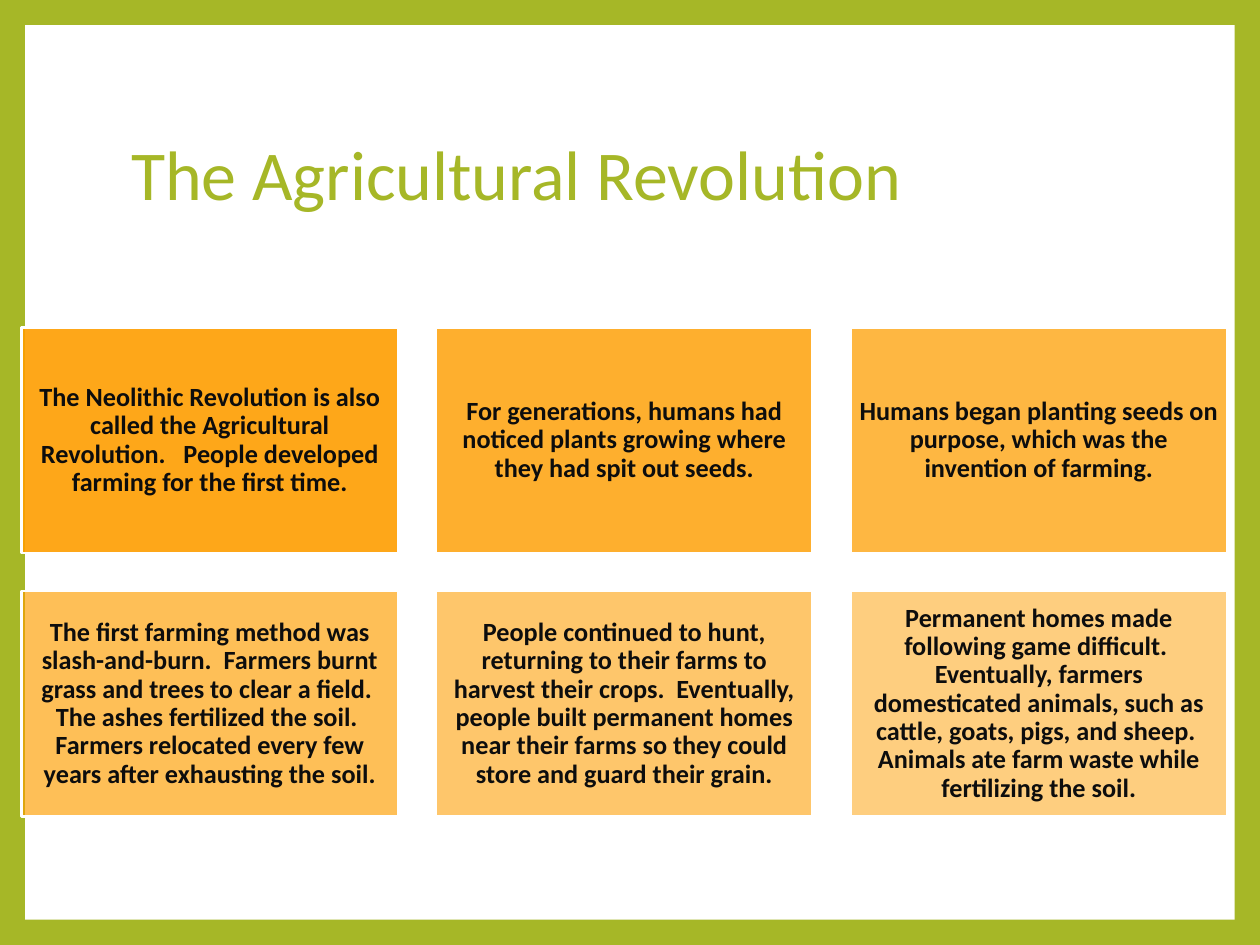
from dataclasses import dataclass

from lxml import etree
from pptx import Presentation
from pptx.dml.color import RGBColor
from pptx.enum.shapes import MSO_SHAPE
from pptx.enum.text import MSO_ANCHOR, MSO_AUTO_SIZE, PP_ALIGN
from pptx.oxml.ns import qn
from pptx.util import Pt

RECT = MSO_SHAPE.RECTANGLE
MIDDLE = MSO_ANCHOR.MIDDLE
FIXED = MSO_AUTO_SIZE.NONE
LEFT, CENTER = PP_ALIGN.LEFT, PP_ALIGN.CENTER
SCALE = 9144


@dataclass(frozen=True)
class Theme:
    """Colours, font and type sizes of the slide."""
    green: RGBColor = RGBColor.from_string("A6B727")
    white: RGBColor = RGBColor.from_string("FFFFFF")
    orange: RGBColor = RGBColor.from_string("FE9E00")
    ink: RGBColor = RGBColor.from_string("0D0D0D")
    font: str = "Calibri"
    head: Pt = Pt(40)
    body: Pt = Pt(15)
    rule: Pt = Pt(1.5)


THEME = Theme()

FACTS = [
    "The Neolithic Revolution is also called the Agricultural Revolution.   "
    "People developed farming for the first time.",
    "For generations, humans had noticed plants growing where they had spit "
    "out seeds.",
    "Humans began planting seeds on purpose, which was the invention of "
    "farming.",
    "The first farming method was slash-and-burn.  Farmers burnt grass and "
    "trees to clear a field.  The ashes fertilized the soil.  Farmers "
    "relocated every few years after exhausting the soil.",
    "People continued to hunt, returning to their farms to harvest their "
    "crops.  Eventually, people built permanent homes near their farms so "
    "they could store and guard their grain.",
    "Permanent homes made following game difficult.  Eventually, farmers "
    "domesticated animals, such as cattle, goats, pigs, and sheep.  Animals "
    "ate farm waste while fertilizing the soil.",
]


def px(*sizes):
    """Turn px lengths into EMU."""
    return [size * SCALE for size in sizes]


def style(item, values):
    """Set each named value on an item."""
    for name, value in values.items():
        setattr(item, name, value)


def write(shape, text, size, color, bold, align, inset):
    """Fill a shape with one formatted paragraph."""
    frame = shape.text_frame
    frame.text = text
    sides = ("margin_left", "margin_top", "margin_right", "margin_bottom")
    style(frame, {"word_wrap": True, "auto_size": FIXED,
                  "vertical_anchor": MIDDLE})
    style(frame, dict.fromkeys(sides, inset * SCALE))
    para = frame.paragraphs[0]
    style(para, {"alignment": align, "line_spacing": 0.9})
    font = para.runs[0].font
    style(font, {"name": THEME.font, "size": size, "bold": bold})
    font.color.rgb = color


def add_box(slide, box, color):
    """Add a flat filled rectangle without a line."""
    shape = slide.shapes.add_shape(RECT, *px(*box))
    shape.shadow.inherit = False
    shape.fill.solid()
    shape.fill.fore_color.rgb = color
    shape.line.fill.background()
    return shape


def add_frame(slide, box):
    """Set the green border around a white panel."""
    fill = slide.background.fill
    fill.solid()
    fill.fore_color.rgb = THEME.green
    panel = add_box(slide, box, THEME.white)
    slide.shapes.title.element.addprevious(panel.element)


def add_title(slide, box, text):
    """Place and format the title."""
    title = slide.shapes.title
    style(title, dict(zip(("left", "top", "width", "height"), px(*box))))
    write(title, text, THEME.head, THEME.green, False, LEFT, 10)


def add_card(slide, box, text, alpha):
    """Add one see-through fact card."""
    card = add_box(slide, box, THEME.orange)
    color = card.element.spPr.find(qn("a:solidFill"))[0]
    etree.SubElement(color, qn("a:alpha"), val=str(alpha * 1000))
    card.line.color.rgb = THEME.white
    card.line.width = THEME.rule
    write(card, text, THEME.body, THEME.ink, True, CENTER, 6)


def add_grid(slide, box, facts, cols=3, gap=30):
    """Lay out the facts in rows of ever paler cards."""
    left, top, width, height = box
    rows = len(facts) // cols
    wide = (width - gap * (cols - 1)) // cols
    high = (height - gap * (rows - 1)) // rows
    for i, fact in enumerate(facts):
        row, col = divmod(i, cols)
        spot = (left + col * (wide + gap), top + row * (high + gap),
                wide, high)
        add_card(slide, spot, fact, 90 - 8 * i)


def main():
    """Build and save the slide."""
    deck = Presentation()
    deck.slide_width, deck.slide_height = px(1000, 750)
    slide = deck.slides.add_slide(deck.slide_layouts[5])
    add_frame(slide, (20, 20, 960, 710))
    add_title(slide, (94, 67, 810, 148), "The Agricultural Revolution")
    add_grid(slide, (17, 260, 957, 389), FACTS)
    deck.save("out.pptx")


if __name__ == "__main__":
    main()
